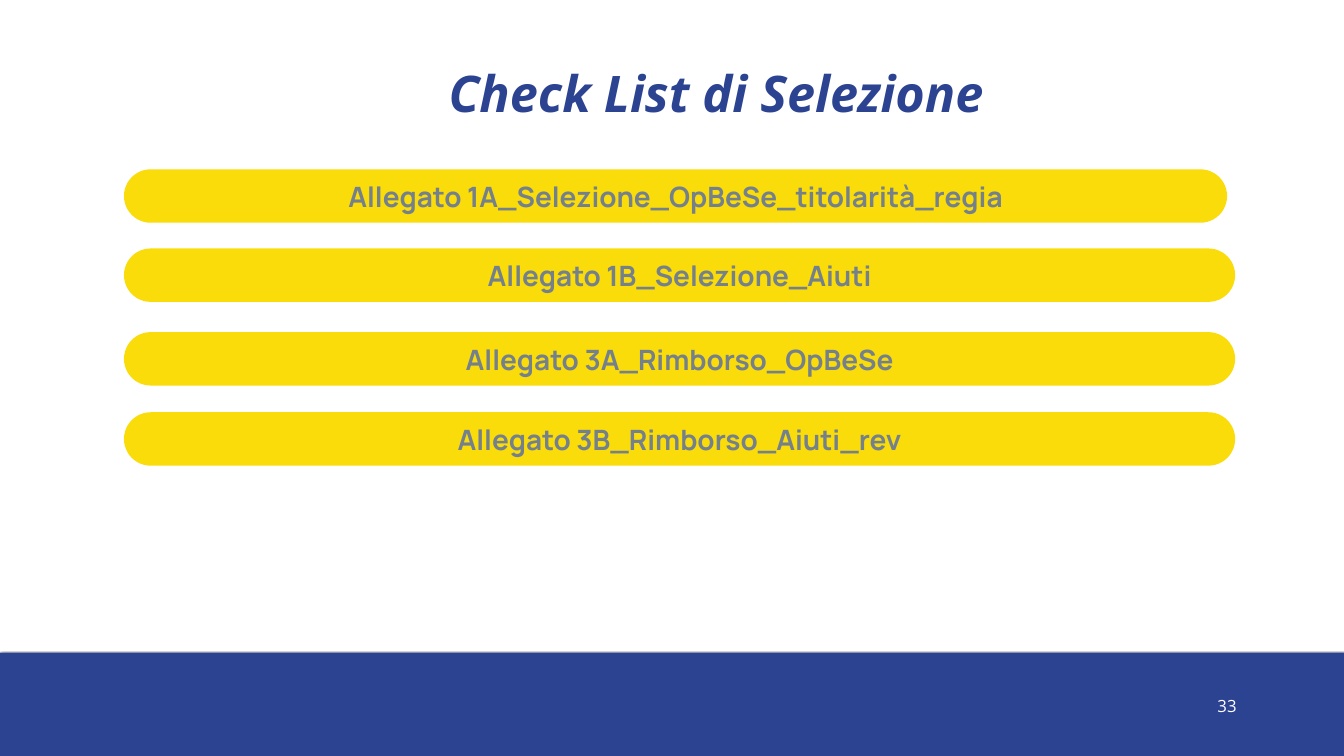
from dataclasses import dataclass

from lxml.etree import SubElement
from pptx import Presentation
from pptx.dml.color import RGBColor
from pptx.enum.shapes import MSO_SHAPE
from pptx.enum.text import MSO_ANCHOR, PP_ALIGN
from pptx.oxml.ns import qn
from pptx.slide import Slide
from pptx.util import Inches, Pt


def color(value):
    return RGBColor.from_string(value)


@dataclass
class ChecklistSlide:
    """Hold the style of the checklist slide and draw its elements."""

    page: Slide
    blue: str = "2B4390"
    yellow: str = "F9DC0A"
    gray: str = "74808C"
    white: str = "FEFCFF"
    heading_font: str = "Open Sans"
    label_font: str = "Manrope"

    def shape(self, kind, left, top, width, height, fill):
        shape = self.page.shapes.add_shape(
            kind, Inches(left), Inches(top), Inches(width), Inches(height))
        shape.shadow.inherit = False
        shape.fill.solid()
        shape.fill.fore_color.rgb = color(fill)
        shape.line.fill.background()
        return shape

    def label(self, shape, text, font, size, ink, bold=False, italic=False, inset=0.04):
        frame = shape.text_frame
        frame.text = text
        frame.word_wrap = True
        frame.margin_left = frame.margin_right = Inches(inset)
        frame.margin_top = frame.margin_bottom = Inches(0.04)
        para = frame.paragraphs[0]
        para.alignment = PP_ALIGN.CENTER
        span = para.runs[0].font
        span.name, span.size = font, Pt(size)
        span.bold, span.italic = bold, italic
        span.color.rgb = color(ink)

    def text(self, text, left, top, width, height, size, ink, **style):
        box = self.page.shapes.add_textbox(
            Inches(left), Inches(top), Inches(width), Inches(height))
        self.label(box, text, self.heading_font, size, ink, **style)

    def footer(self, left, top, width, height):
        band = self.shape(MSO_SHAPE.RECTANGLE, left, top, width, height, self.blue)
        effects = band._element.spPr.find(qn("a:effectLst"))
        shadow = SubElement(effects, qn("a:outerShdw"), blurRad=str(Pt(2)), dist="0", dir="0")
        tint = SubElement(shadow, qn("a:srgbClr"), val="000000")
        SubElement(tint, qn("a:alpha"), val="50000")

    def pill(self, text, left, top, width):
        pill = self.shape(MSO_SHAPE.ROUNDED_RECTANGLE, left, top, width, 1.06, self.yellow)
        pill.adjustments[0] = 0.5
        self.label(pill, text, self.label_font, 40, self.gray, bold=True)
        pill.text_frame.vertical_anchor = MSO_ANCHOR.MIDDLE


def main():
    deck = Presentation()
    deck.slide_width, deck.slide_height = Inches(26.67), Inches(15)
    slide = ChecklistSlide(deck.slides.add_slide(deck.slide_layouts[6]))
    slide.footer(0, 12.95, 26.67, 2.05)
    slide.text("33", 23.86, 13.77, 0.98, 0.53, 24, slide.white)
    slide.text("Check List di Selezione", 5.25, 1.19, 17.93, 1.31, 72, slide.blue,
               bold=True, italic=True, inset=0.1)
    attachments = [
        ("Allegato 1A_Selezione_OpBeSe_titolarità_regia", 3.36, 21.89),
        ("Allegato 1B_Selezione_Aiuti", 4.93, 22.05),
        ("Allegato 3A_Rimborso_OpBeSe", 6.59, 22.05),
        ("Allegato 3B_Rimborso_Aiuti_rev", 8.18, 22.05),
    ]
    for name, top, width in attachments:
        slide.pill(name, 2.46, top, width)
    deck.save("out.pptx")


if __name__ == "__main__":
    main()
